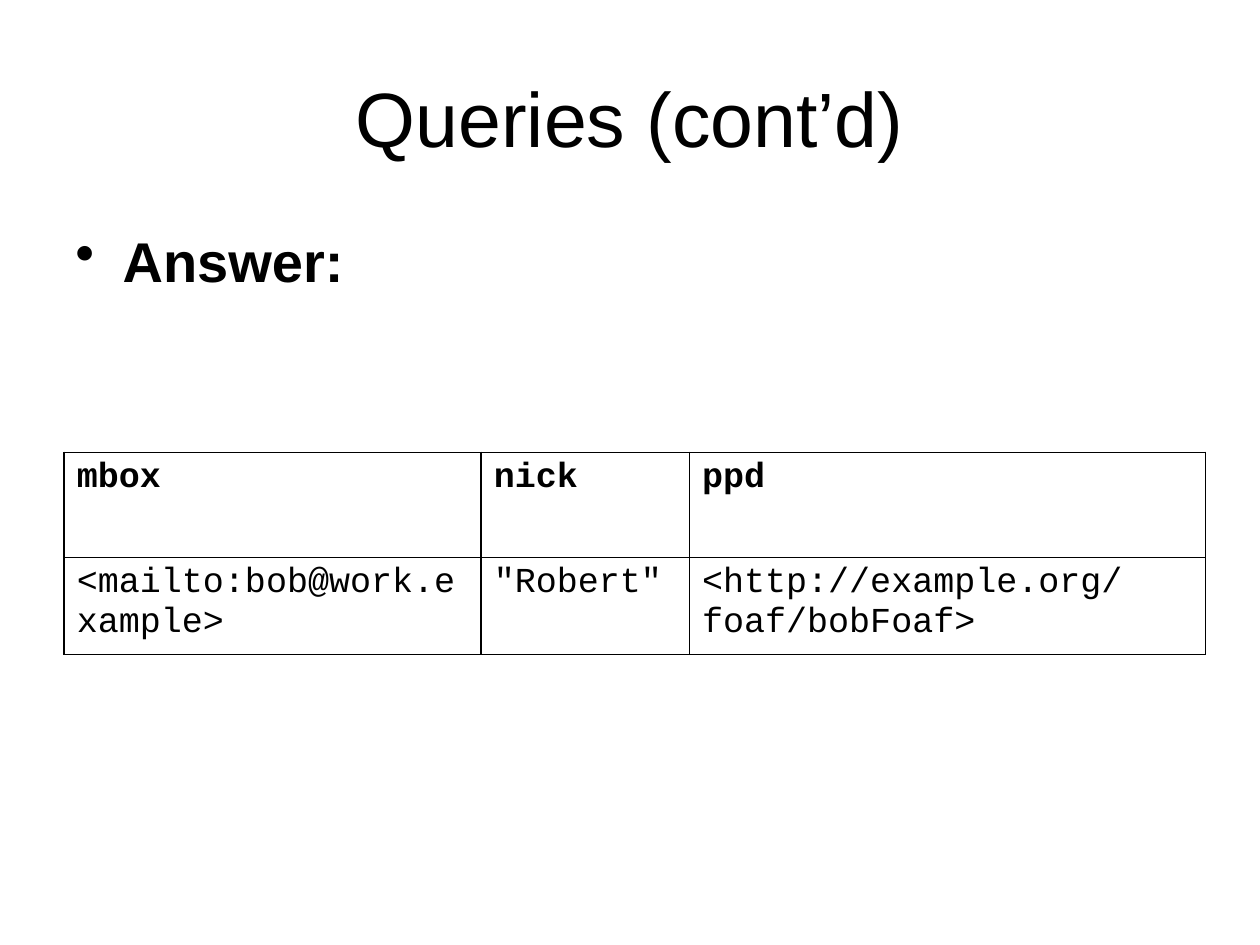
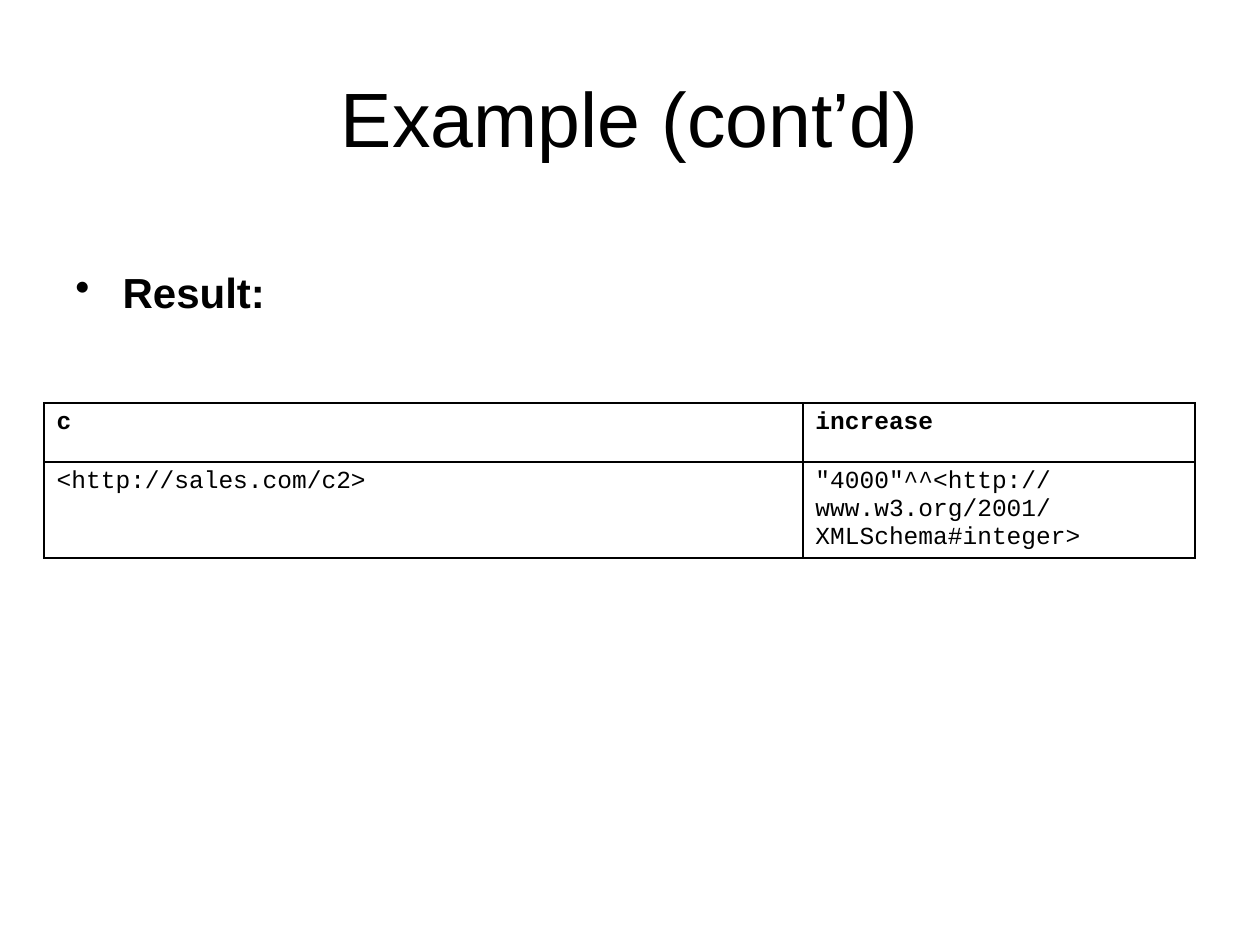
import pptx
import pptx.dml.color
import pptx.enum.text
import pptx.oxml
import pptx.oxml.ns
import pptx.util
from pptx.util import Pt

BLACK = pptx.dml.color.RGBColor(0, 0, 0)
WHITE = pptx.dml.color.RGBColor(255, 255, 255)
SANS = "Arial"
MONO = "Courier New"
LEFT, WIDE = 36, 648
INDENT = 27


def make(tag, inner="", **attrs):
    """Build one drawing element from its tag, content and attributes."""
    names = " ".join(f'{key}="{val}"' for key, val in attrs.items())
    space = pptx.oxml.ns.nsdecls("a")
    return pptx.oxml.parse_xml(f"<a:{tag} {space} {names}>{inner}</a:{tag}>")


class Deck:
    def __init__(self):
        self.prs = pptx.Presentation()
        self.prs.slide_width = Pt(720)
        self.prs.slide_height = Pt(540)
        self.slide = None

    def style(self, para, text, size, face=SANS, bold=False):
        para.text = text
        font = para.font
        font.name, font.size, font.bold = face, Pt(size), bold
        font.color.rgb = BLACK

    def frame(self, shape, anchor):
        frame = shape.text_frame
        frame.word_wrap = True
        frame.auto_size = pptx.enum.text.MSO_AUTO_SIZE.NONE
        frame.vertical_anchor = anchor
        return frame

    def title(self, text):
        """Start a slide with the given title."""
        self.slide = self.prs.slides.add_slide(self.prs.slide_layouts[5])
        fill = self.slide.background.fill
        fill.solid()
        fill.fore_color.rgb = WHITE
        shape = self.slide.shapes.title
        shape.left, shape.top = Pt(LEFT), Pt(21.6)
        shape.width, shape.height = Pt(WIDE), Pt(90)
        para = self.frame(shape, pptx.enum.text.MSO_ANCHOR.MIDDLE).paragraphs[0]
        self.style(para, text, 44)
        para.alignment = pptx.enum.text.PP_ALIGN.CENTER

    def bullet(self, text, top, height, size):
        box = self.slide.shapes.add_textbox(Pt(LEFT), Pt(top), Pt(WIDE), Pt(height))
        para = self.frame(box, pptx.enum.text.MSO_ANCHOR.TOP).paragraphs[0]
        self.style(para, text, size, bold=True)
        props = para._p.get_or_add_pPr()
        props.set("marL", str(Pt(INDENT)))
        props.set("indent", str(-Pt(INDENT)))
        mark = make("buChar", char="•")
        props.insert_element_before(mark, "a:tabLst", "a:defRPr", "a:extLst")

    def border(self, cell):
        props = cell._tc.get_or_add_tcPr()
        fill = f'<a:solidFill><a:srgbClr val="{BLACK}"/></a:solidFill>'
        for spot, side in enumerate("LRTB"):
            props.insert(spot, make(f"ln{side}", fill, w=Pt(1)))

    def table(self, rows, left, top, widths, heights, size):
        """Draw a ruled table whose first row is bold."""
        grid = self.slide.shapes.add_table(
            len(rows), len(widths), Pt(left), Pt(top),
            Pt(sum(widths)), Pt(sum(heights))).table
        grid.first_row = grid.horz_banding = False
        for col, width in zip(grid.columns, widths):
            col.width = Pt(width)
        for row, height, texts in zip(grid.rows, heights, rows):
            row.height = Pt(height)
            for cell, text in zip(row.cells, texts):
                para = cell.text_frame.paragraphs[0]
                self.style(para, text, size, MONO, bold=texts is rows[0])
                cell.fill.background()
                self.border(cell)


def main():
    deck = Deck()

    deck.title("Queries (cont’d)")
    deck.bullet("Answer:", 126, 356, 32)
    deck.table(
        [["mbox", "nick", "ppd"],
         ["<mailto:bob@work.example>", '"Robert"',
          "<http://example.org/foaf/bobFoaf>"]],
        36.7, 258.5, [238.3, 119, 295], [60, 55.4], 20)

    deck.title("Example (cont’d)")
    deck.bullet("Result:", 149, 391, 24)
    deck.table(
        [["c", "increase"],
         ["<http://sales.com/c2>",
          '"4000"^^<http://www.w3.org/2001/XMLSchema#integer>']],
        25.2, 230.4, [433.6, 224], [33.6, 43.2], 14)

    deck.prs.save("out.pptx")


if __name__ == "__main__":
    main()
